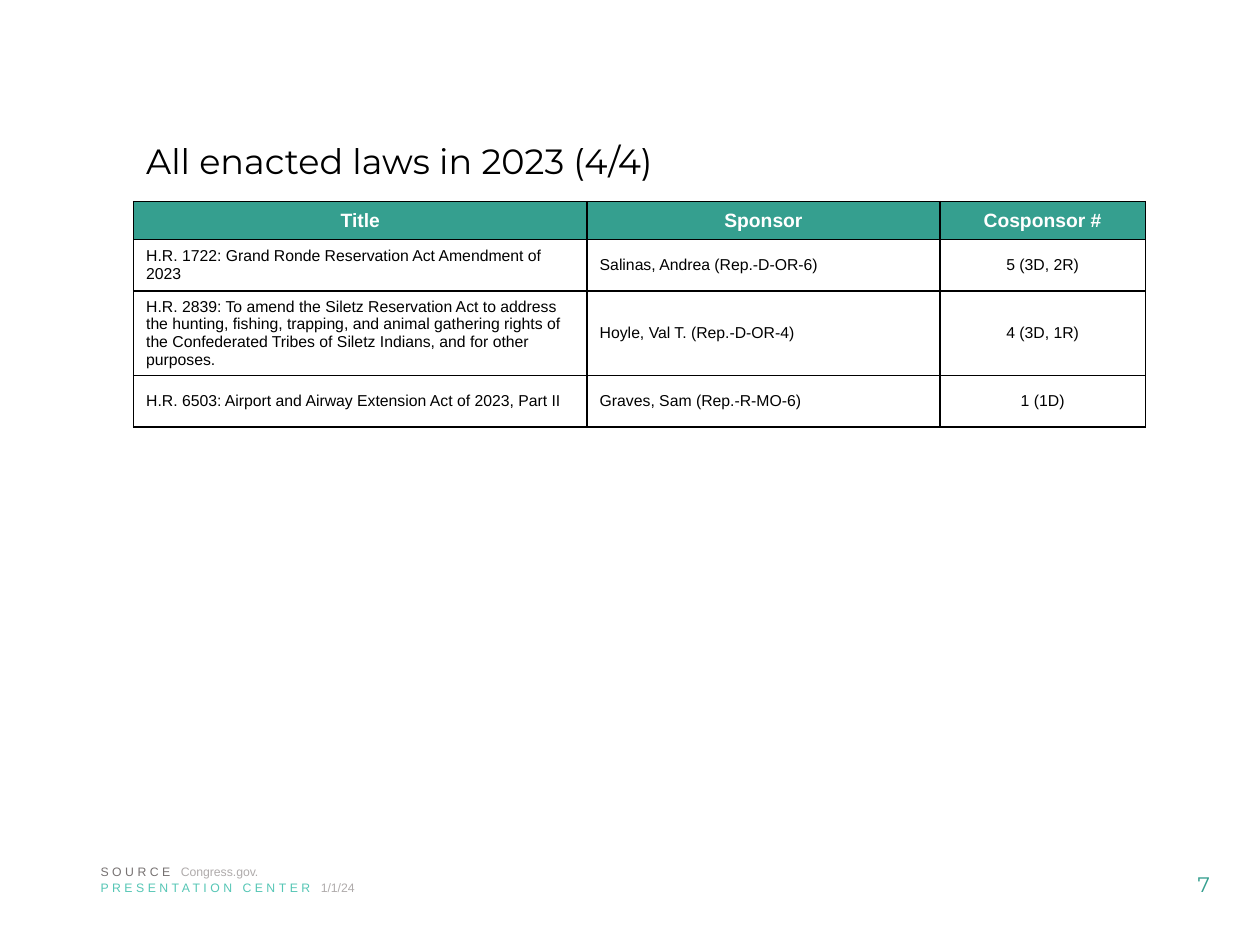
"""Build the slide that lists the last of the laws enacted in 2023."""
import lxml.etree
import pptx
import pptx.dml.color
import pptx.enum.text
import pptx.oxml.ns
import pptx.util

THEME = {
    "teal": "359F8F", "mint": "55C6B5", "black": "000000", "white": "FFFFFF",
    "gray": "767171", "pale": "AFABAB",
    "head": "Montserrat", "body": "Arial",
    "title": 20, "label": 11, "cell": 9, "page": 12, "note": 7,
}
ALIGN = pptx.enum.text.PP_ALIGN
MIDDLE = pptx.enum.text.MSO_ANCHOR.MIDDLE
FIT = pptx.enum.text.MSO_AUTO_SIZE

deck = pptx.Presentation()
deck.slide_width = pptx.util.Inches(10)
deck.slide_height = pptx.util.Inches(7.5)
COL = deck.slide_width / 100
ROW = deck.slide_height / 75


def place(left, top, width, height):
    """Turn grid columns and rows into slide lengths."""
    return [round(left * COL), round(top * ROW), round(width * COL), round(height * ROW)]


def write(frame, text, size="cell", face="body", color="black", bold=False,
          align=ALIGN.LEFT, space=0):
    """Add a run of text to the first line of a frame."""
    line = frame.paragraphs[0]
    line.alignment = align
    run = line.add_run()
    run.text = text
    run.font.size = pptx.util.Pt(THEME[size])
    run.font.name = THEME[face]
    run.font.bold = bold
    run.font.color.rgb = pptx.dml.color.RGBColor.from_string(THEME[color])
    if space:
        run.font._element.set("spc", str(space * 100))


slide = deck.slides.add_slide(deck.slide_layouts[5])
shapes = slide.shapes

title = shapes.title
title.left, title.top, title.width, title.height = place(10.6, 9, 80.3, 7.9)
title.text_frame.auto_size = FIT.NONE
title.text_frame.vertical_anchor = MIDDLE
write(title.text_frame, "All enacted laws in 2023 (4/4)", size="title", face="head")
title.text_frame.paragraphs[0].line_spacing = 0.9

laws = [
    ("Title", "Sponsor", "Cosponsor #"),
    ("H.R. 1722: Grand Ronde Reservation Act Amendment of 2023",
     "Salinas, Andrea (Rep.-D-OR-6)", "5 (3D, 2R)"),
    ("H.R. 2839: To amend the Siletz Reservation Act to address the hunting, fishing, "
     "trapping, and animal gathering rights of the Confederated Tribes of Siletz Indians, "
     "and for other purposes.",
     "Hoyle, Val T. (Rep.-D-OR-4)", "4 (3D, 1R)"),
    ("H.R. 6503: Airport and Airway Extension Act of 2023, Part II",
     "Graves, Sam (Rep.-R-MO-6)", "1 (1D)"),
]
widths = [36, 28, 16.3]
heights = [3, 4.1, 6.7, 4.1]
table = shapes.add_table(len(laws), len(widths),
                         *place(10.6, 16, sum(widths), sum(heights))).table
table.horz_banding = False
for c, width in enumerate(widths):
    table.columns[c].width = round(width * COL)
for r, law in enumerate(laws):
    table.rows[r].height = round(heights[r] * ROW)
    for c, text in enumerate(law):
        cell = table.cell(r, c)
        cell.vertical_anchor = MIDDLE
        props = cell._tc.get_or_add_tcPr()
        for side in ("lnL", "lnR", "lnT", "lnB"):
            edge = lxml.etree.SubElement(props, pptx.oxml.ns.qn("a:" + side), w="12700")
            paint = lxml.etree.SubElement(edge, pptx.oxml.ns.qn("a:solidFill"))
            lxml.etree.SubElement(paint, pptx.oxml.ns.qn("a:srgbClr"), val=THEME["black"])
        if r == 0:
            cell.fill.solid()
            cell.fill.fore_color.rgb = pptx.dml.color.RGBColor.from_string(THEME["teal"])
            write(cell.text_frame, text, size="label", color="white", bold=True,
                  align=ALIGN.CENTER)
        else:
            cell.fill.background()
            write(cell.text_frame, text, align=ALIGN.CENTER if c == 2 else ALIGN.LEFT)

notes = [
    (69.4, 29.4, "PRESENTATION CENTER ", "mint", "1/1/24"),
    (68.1, 67.1, "SOURCE ", "gray", "Congress.gov."),
]
for top, width, label, color, text in notes:
    frame = shapes.add_textbox(*place(7, top, width, 2.2)).text_frame
    frame.word_wrap = True
    frame.auto_size = FIT.SHAPE_TO_FIT_TEXT
    write(frame, label, size="note", color=color, space=2)
    write(frame, text, size="note", color="pale")

page = shapes.add_textbox(*place(91.1, 68.2, 8.9, 4)).text_frame
page.word_wrap = True
page.vertical_anchor = MIDDLE
write(page, "7", size="page", face="head", color="teal", align=ALIGN.CENTER)

deck.save("out.pptx")
